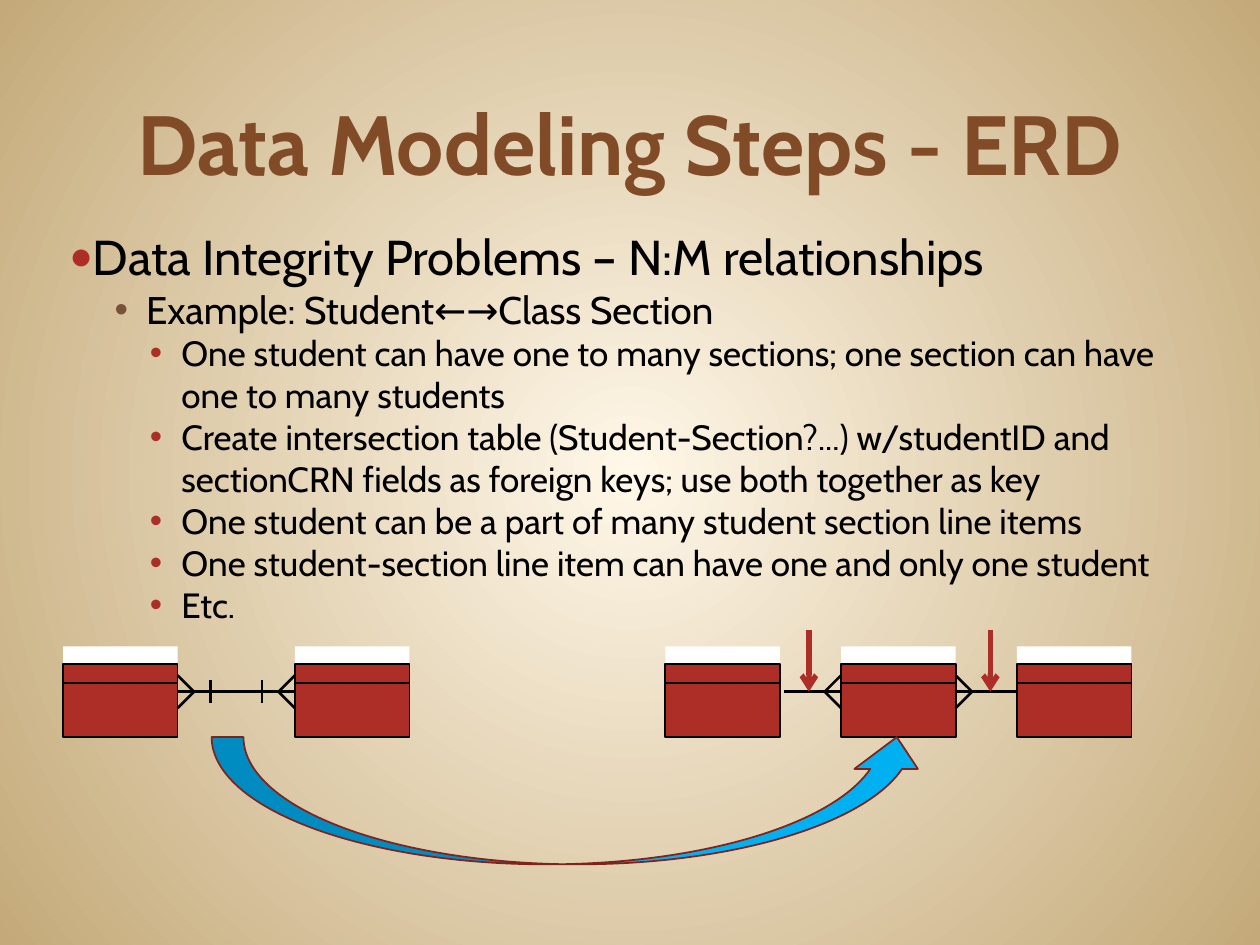
from dataclasses import dataclass

from lxml import etree
from pptx import Presentation
from pptx import util as u
from pptx.dml.color import RGBColor
from pptx.enum import shapes, text
from pptx.oxml.ns import qn

In = u.Inches


@dataclass(frozen=True)
class Theme:
    font: str = "Cabin"
    title: str = "804B26"
    ink: str = "000000"
    red: str = "AD2E27"
    brown: str = "795339"
    white: str = "FFFFFF"
    blue: str = "00B0F0"
    edge: str = "80221D"
    glow: str = "FFF7E8"
    sand: str = "C4AA7A"
    head: int = 48
    sizes: tuple = (28, 22, 20)


T = Theme()

# Per level: left margin, hanging indent, bullet, bullet colour, bullet size
LEVELS = [
    (0, -0.3, "●", T.red, 80),
    (0.61, -0.25, "•", T.brown, 100),
    (0.89, -0.25, "•", T.red, 100),
]
POINTS = [
    (0, "Data Integrity Problems – N:M relationships"),
    (1, "Example: Student←→Class Section"),
    (2, "One student can have one to many sections; one section can have "
        "one to many students"),
    (2, "Create intersection table (Student-Section?...) w/studentID and "
        "sectionCRN fields as foreign keys; use both together as key"),
    (2, "One student can be a part of many student section line items"),
    (2, "One student-section line item can have one and only one student"),
    (2, "Etc."),
]

# Entity box: width, and the heights of its name, key and field bands
WIDE = 0.91
BANDS = [(0.14, T.white, None), (0.15, T.red, T.ink), (0.43, T.red, T.ink)]
AXIS = 0.36    # relationship line, below the top of an entity
FOOT = 0.13    # reach of a crow's foot


def rgb(code):
    return RGBColor.from_string(code)


def write(para, words, size, color=T.ink, bold=False, align=None):
    run = para.add_run()
    run.text = words
    run.font.name, run.font.size, run.font.bold = T.font, u.Pt(size), bold
    run.font.color.rgb = rgb(color)
    para.alignment = align
    para.space_before = para.space_after = u.Pt(0)
    para.line_spacing = 1.0


def place(part, box):
    part.left, part.top, part.width, part.height = map(In, box)


def bullet(para, level):
    left, hang, mark, color, size = LEVELS[level]
    para.level = level
    props = para._p.get_or_add_pPr()
    props.set("marL", str(In(left)))
    props.set("indent", str(In(hang)))
    tint = etree.SubElement(props, qn("a:buClr"))
    etree.SubElement(tint, qn("a:srgbClr"), val=color)
    etree.SubElement(props, qn("a:buSzPct"), val=str(size * 1000))
    etree.SubElement(props, qn("a:buFont"), typeface="Arial")
    etree.SubElement(props, qn("a:buChar"), char=mark)


def shape(home, kind, box, fill, line=None):
    part = home.add_shape(kind, *map(In, box))
    part.shadow.inherit = False
    part.fill.solid()
    part.fill.fore_color.rgb = rgb(fill)
    if line:
        part.line.color.rgb, part.line.width = rgb(line), u.Pt(1)
    else:
        part.line.fill.background()


def line(home, x1, y1, x2, y2, color=T.ink, width=1.5, arrow=False):
    part = home.add_connector(shapes.MSO_CONNECTOR.STRAIGHT,
                              *map(In, (x1, y1, x2, y2)))
    part.line.color.rgb, part.line.width = rgb(color), u.Pt(width)
    if arrow:
        etree.SubElement(part.line._get_or_add_ln(), qn("a:tailEnd"),
                         type="arrow")
    etree.SubElement(part._element.spPr, qn("a:effectLst"))


def entity(home, left, top):
    for high, fill, edge in BANDS:
        shape(home, shapes.MSO_SHAPE.RECTANGLE, (left, top, WIDE, high),
              fill, edge)
        top += high


def link(home, edge, far, y, bar=None):
    """Line from an entity's edge to far, with a crow's foot at the edge."""
    side = 1 if far > edge else -1
    tip = edge + side * FOOT
    line(home, far, y, edge, y)
    for rise in (-FOOT, FOOT):
        line(home, tip, y, edge, y + rise)
    if bar:
        x = edge + side * bar
        line(home, x, y - 0.09, x, y + 0.09)


# Background: glow from the centre
def backdrop(slide):
    fill = slide.background.fill
    fill.gradient()
    for stop, place_at, color in zip(fill.gradient_stops, (0, 1),
                                     (T.glow, T.sand)):
        stop.position, stop.color.rgb = place_at, rgb(color)
    grad = slide._element.find(".//" + qn("a:gradFill"))
    old = grad.find(qn("a:lin"))
    ring = etree.Element(qn("a:path"), {"path": "circle"})
    etree.SubElement(ring, qn("a:fillToRect"),
                     dict.fromkeys("ltrb", "50000"))
    grad.replace(old, ring)


def heading(slide, box):
    part = slide.shapes.title
    place(part, box)
    frame = part.text_frame
    frame.auto_size = text.MSO_AUTO_SIZE.NONE
    frame.vertical_anchor = text.MSO_ANCHOR.BOTTOM
    write(frame.paragraphs[0], "Data Modeling Steps - ERD", T.head,
          color=T.title, bold=True, align=text.PP_ALIGN.CENTER)


def points(slide, box):
    part = slide.placeholders[1]
    place(part, box)
    frame = part.text_frame
    frame.auto_size = text.MSO_AUTO_SIZE.NONE
    frame.vertical_anchor = text.MSO_ANCHOR.TOP
    frame.margin_left = frame.margin_right = In(0.05)
    frame.margin_top = frame.margin_bottom = In(0.05)
    for i, (level, words) in enumerate(POINTS):
        para = frame.add_paragraph() if i else frame.paragraphs[0]
        write(para, words, T.sizes[level], align=text.PP_ALIGN.LEFT)
        bullet(para, level)


# Many-to-many: two entities joined directly
def direct(slide, left, top, width):
    home = slide.shapes.add_group_shape().shapes
    right, mid, y = left + width - WIDE, left + width / 2, top + AXIS
    for x in (left, right):
        entity(home, x, top)
    for edge in (left + WIDE, right):
        link(home, edge, mid, y, bar=0.26)


# Intersection table between the two entities
def split(slide, left, top, width):
    home = slide.shapes.add_group_shape().shapes
    step, y = (width - WIDE) / 2, top + AXIS
    for i in range(3):
        entity(home, left + i * step, top)
    link(home, left + step, left + WIDE + 0.03, y)
    link(home, left + step + WIDE, left + 2 * step, y)


# Sweep from one model to the other, and pointers to the new links
def arrows(slide, box, marks):
    shape(slide.shapes, shapes.MSO_SHAPE.CURVED_UP_ARROW, box, T.blue, T.edge)
    for x in marks:
        line(slide.shapes, x, 5, x, 5.49, T.red, 3, arrow=True)


def main():
    deck = Presentation()
    deck.slide_width, deck.slide_height = In(10), In(7.5)
    slide = deck.slides.add_slide(deck.slide_layouts[1])
    backdrop(slide)
    heading(slide, (0.5, 0.33, 9, 1.25))
    points(slide, (0.5, 1.75, 9, 4.95))
    direct(slide, 0.5, 5.13, 2.75)
    split(slide, 5.28, 5.13, 3.7)
    arrows(slide, (1.68, 5.85, 5.69, 1.01), (6.42, 7.86))
    deck.save("out.pptx")


if __name__ == "__main__":
    main()
